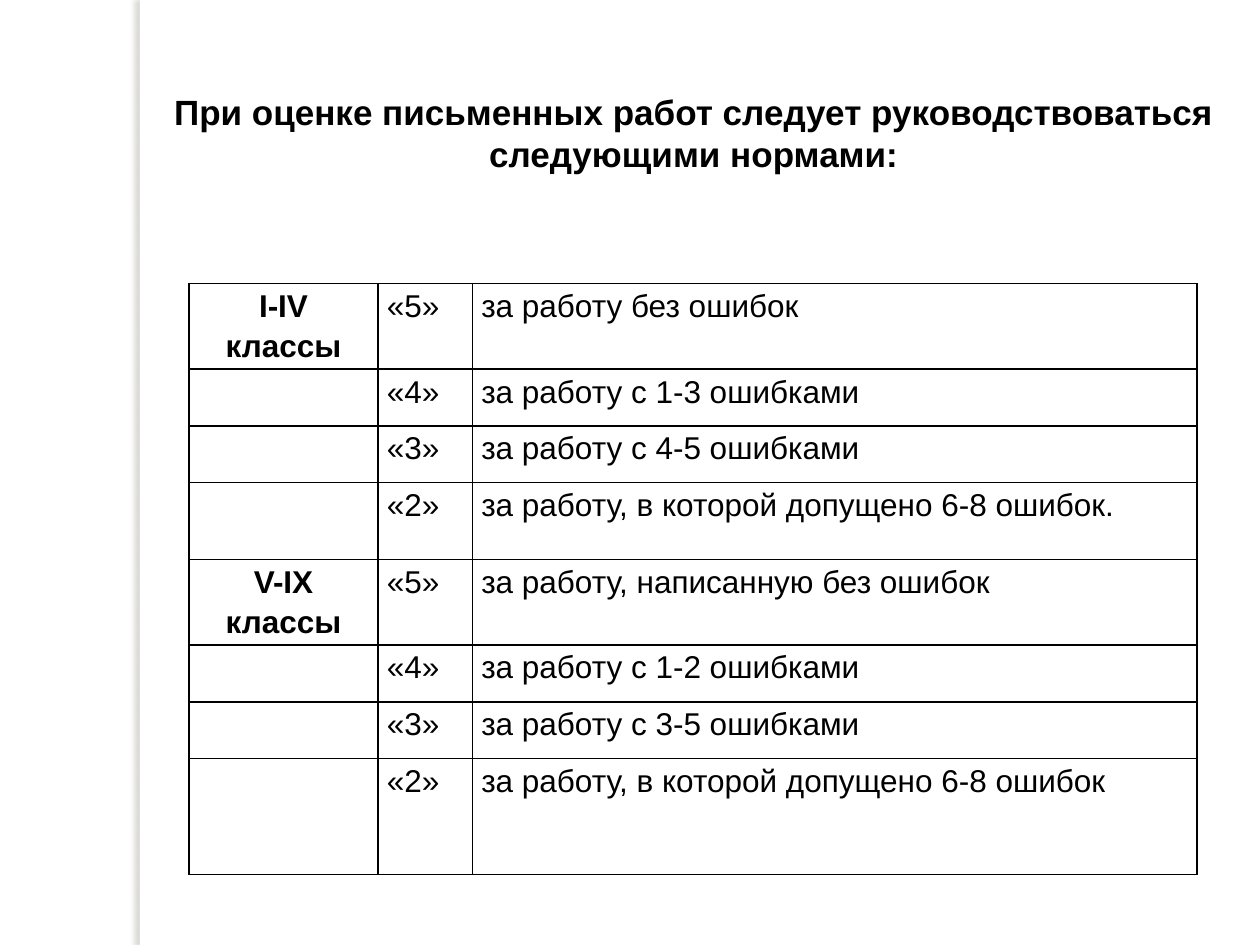
import dataclasses

import pptx
import pptx.dml.color
import pptx.enum.shapes
import pptx.enum.text
import pptx.oxml
import pptx.oxml.ns
import pptx.util

Inches = pptx.util.Inches
Pt = pptx.util.Pt
ALIGN = pptx.enum.text.PP_ALIGN
BLACK = pptx.dml.color.RGBColor(0x00, 0x00, 0x00)
WHITE = pptx.dml.color.RGBColor(0xFF, 0xFF, 0xFF)
SHADE = pptx.dml.color.RGBColor(0x73, 0x6F, 0x63)
FONT = "Arial"
COLS = (1.5, 0.75, 5.75)
SIDES = ("lnL", "lnR", "lnT", "lnB")


@dataclasses.dataclass(frozen=True)
class Norm:
    group: str
    mark: str
    rule: str
    height: float = 0.45


NORMS = (
    Norm("I-IV классы", "«5»", "за работу без ошибок", 0.68),
    Norm("", "«4»", "за работу с 1-3 ошибками"),
    Norm("", "«3»", "за работу с 4-5 ошибками"),
    Norm("", "«2»", "за работу, в которой допущено 6-8 ошибок.", 0.61),
    Norm("V-IX классы", "«5»", "за работу, написанную без ошибок", 0.68),
    Norm("", "«4»", "за работу с 1-2 ошибками"),
    Norm("", "«3»", "за работу с 3-5 ошибками"),
    Norm("", "«2»", "за работу, в которой допущено 6-8 ошибок", 0.92),
)


def style(para, size: int, bold: bool, align) -> None:
    para.alignment = align
    for run in para.runs:
        run.font.name = FONT
        run.font.size = Pt(size)
        run.font.bold = bold
        run.font.color.rgb = BLACK


def add_strip(slide) -> None:
    strip = slide.shapes.add_shape(
        pptx.enum.shapes.MSO_SHAPE.RECTANGLE,
        Inches(1.11), 0, Inches(0.08), Inches(7.5),
    )
    strip.fill.solid()
    strip.fill.fore_color.rgb = WHITE
    strip.line.fill.background()
    strip.shadow.inherit = False
    glow = strip._element.spPr.find(pptx.oxml.ns.qn("a:effectLst"))
    glow.append(pptx.oxml.parse_xml(
        f'<a:outerShdw {pptx.oxml.ns.nsdecls("a")} blurRad="{Pt(3)}" '
        f'dist="{Pt(3)}" dir="10800000" algn="r" rotWithShape="0">'
        f'<a:srgbClr val="{SHADE}"><a:alpha val="25000"/></a:srgbClr>'
        "</a:outerShdw>"
    ))


def add_title(slide) -> None:
    title = slide.shapes.title
    title.left, title.top = Inches(0.92), Inches(0.67)
    title.width, title.height = Inches(9.17), Inches(0.77)
    frame = title.text_frame
    frame.text = (
        "При оценке письменных работ следует руководствоваться "
        "следующими нормами:"
    )
    frame.word_wrap = True
    frame.auto_size = pptx.enum.text.MSO_AUTO_SIZE.NONE
    frame.vertical_anchor = pptx.enum.text.MSO_ANCHOR.MIDDLE
    style(frame.paragraphs[0], 20, True, ALIGN.CENTER)


def frame_cell(cell) -> None:
    props = cell._tc.get_or_add_tcPr()
    for side in SIDES:
        props.append(pptx.oxml.parse_xml(
            f'<a:{side} {pptx.oxml.ns.nsdecls("a")} w="{Pt(1)}">'
            f'<a:solidFill><a:srgbClr val="{BLACK}"/></a:solidFill>'
            f"</a:{side}>"
        ))
    cell.fill.background()


def fill_cell(cell, text: str, head: bool) -> None:
    frame_cell(cell)
    cell.margin_left = cell.margin_right = Inches(0.07)
    cell.margin_top = cell.margin_bottom = 0
    if text:
        cell.text_frame.text = text
        para = cell.text_frame.paragraphs[0]
        para.line_spacing = 1.15
        style(para, 18, head, ALIGN.CENTER if head else ALIGN.LEFT)


def add_norms(slide) -> None:
    table = slide.shapes.add_table(
        len(NORMS), len(COLS), Inches(1.5), Inches(2.25),
        Inches(sum(COLS)), Inches(sum(norm.height for norm in NORMS)),
    ).table
    table.first_row = False
    table.horz_banding = False
    for col, width in zip(table.columns, COLS):
        col.width = Inches(width)
    for row, norm in zip(table.rows, NORMS):
        row.height = Inches(norm.height)
        texts = (norm.group, norm.mark, norm.rule)
        for spot, (cell, text) in enumerate(zip(row.cells, texts)):
            fill_cell(cell, text, spot == 0)


def main() -> None:
    deck = pptx.Presentation()
    deck.slide_width, deck.slide_height = Inches(10), Inches(7.5)
    slide = deck.slides.add_slide(deck.slide_layouts[5])
    slide.background.fill.solid()
    slide.background.fill.fore_color.rgb = WHITE
    add_strip(slide)
    add_norms(slide)
    add_title(slide)
    deck.save("out.pptx")


if __name__ == "__main__":
    main()
